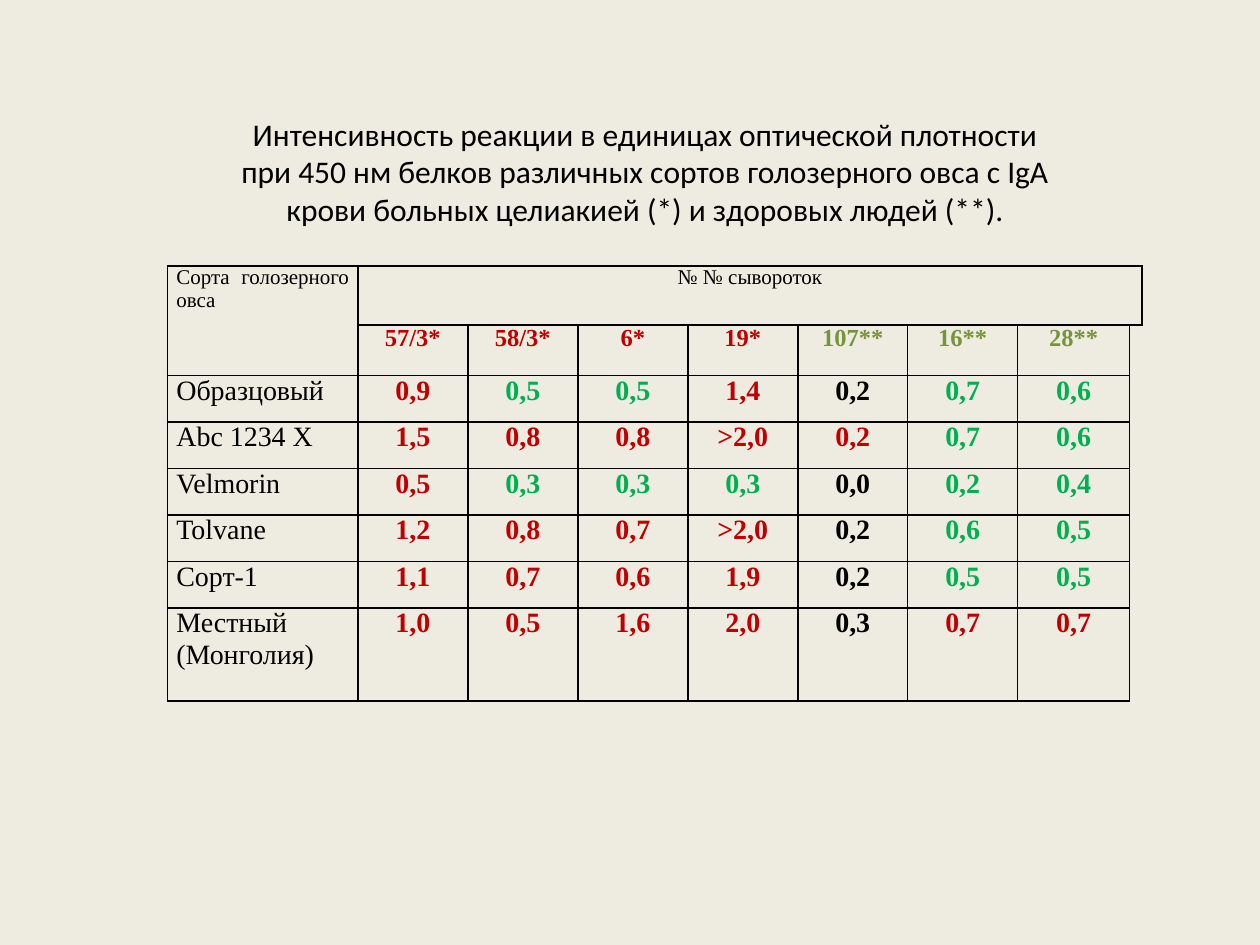
from lxml.etree import SubElement
from pptx import Presentation
from pptx.dml.color import RGBColor
from pptx.enum.text import MSO_ANCHOR, PP_ALIGN as Align
from pptx.oxml.ns import qn
from pptx.util import Pt

COLORS = {
    "background": "EEECE1",
    "black": "000000",
    "red": "C00000",
    "green": "00B050",
    "olive": "77933C",
}
CODES = {"r": "red", "g": "green", "k": "black", "o": "olive"}

TITLE = ("Интенсивность реакции в единицах оптической плотности при 450 нм белков "
         "различных сортов голозерного овса с IgA крови больных целиакией (*) "
         "и здоровых людей (**).")
SERA = "57/3* 58/3* 6* 19* 107** 16** 28**"
# Variety, readings, colour code of each reading
VARIETIES = [
    ("Образцовый", "0,9 0,5 0,5 1,4 0,2 0,7 0,6", "rggrkgg"),
    ("Abc 1234 X", "1,5 0,8 0,8 >2,0 0,2 0,7 0,6", "rrrrrgg"),
    ("Velmorin", "0,5 0,3 0,3 0,3 0,0 0,2 0,4", "rgggkgg"),
    ("Tolvane", "1,2 0,8 0,7 >2,0 0,2 0,6 0,5", "rrrrkgg"),
    ("Сорт-1", "1,1 0,7 0,6 1,9 0,2 0,5 0,5", "rrrrkgg"),
    ("Местный (Монголия)", "1,0 0,5 1,6 2,0 0,3 0,7 0,7", "rrrrkrr"),
]
COLUMN_WIDTHS = [108.7] + [62.85] * 6 + [63.9, 7.2]
ROW_HEIGHTS = [33.7, 28.9] + [26.6] * 5 + [53.2]
SPACER = len(COLUMN_WIDTHS) - 1


def add_run(paragraph, text, font, size, color="black", bold=False):
    run = paragraph.add_run()
    run.text = text
    run.font.name = font
    run.font.size = Pt(size)
    run.font.bold = bold
    run.font.color.rgb = RGBColor.from_string(COLORS[color])


def set_borders(cell, sides):
    """Draw the sides named among L, R, T, B and clear the others."""
    properties = cell._tc.get_or_add_tcPr()
    for side in "LRTB":
        line = SubElement(properties, qn(f"a:ln{side}"), w=str(Pt(1)))
        if side in sides:
            fill = SubElement(line, qn("a:solidFill"))
            SubElement(fill, qn("a:srgbClr"), val=COLORS["black"])
        else:
            SubElement(line, qn("a:noFill"))


def write_cell(cell, text, size, align=Align.CENTER, color="black", bold=False):
    cell.margin_left = cell.margin_right = Pt(5)
    paragraph = cell.text_frame.paragraphs[0]
    paragraph.alignment = align
    paragraph.space_before = Pt(12)
    add_run(paragraph, text, "Times New Roman", size, color, bold)


def write_values(table, row, values, codes, size):
    for column, (value, code) in enumerate(zip(values.split(), codes), start=1):
        write_cell(table.cell(row, column), value, size, color=CODES[code], bold=True)


def add_title(slide, left, top, width, height):
    box = slide.shapes.add_textbox(Pt(left), Pt(top), Pt(width), Pt(height))
    box.text_frame.word_wrap = True
    paragraph = box.text_frame.paragraphs[0]
    paragraph.alignment = Align.CENTER
    add_run(paragraph, TITLE, "Calibri", 18)


def add_reaction_table(slide, left, top):
    frame = slide.shapes.add_table(
        len(ROW_HEIGHTS), len(COLUMN_WIDTHS), Pt(left), Pt(top),
        Pt(sum(COLUMN_WIDTHS)), Pt(sum(ROW_HEIGHTS)))
    table = frame.table
    table.first_row = table.horz_banding = False
    for column, width in zip(table.columns, COLUMN_WIDTHS):
        column.width = Pt(width)

    # Grid: the narrow last column is open below the header
    for row_index, (row, height) in enumerate(zip(table.rows, ROW_HEIGHTS)):
        row.height = Pt(height)
        for column_index, cell in enumerate(row.cells):
            open_cell = column_index == SPACER and row_index > 0
            open_sides = "LT" if row_index == 1 else "L"
            set_borders(cell, open_sides if open_cell else "LRTB")
            cell.fill.background()
            cell.vertical_anchor = MSO_ANCHOR.TOP
            cell.margin_left = cell.margin_right = 0
            cell.margin_top = cell.margin_bottom = 0

    # Header
    table.cell(0, 0).merge(table.cell(1, 0))
    table.cell(0, 1).merge(table.cell(0, SPACER))
    write_cell(table.cell(0, 0), "Сорта голозерного овса", 12, Align.JUSTIFY)
    write_cell(table.cell(0, 1), "№ № сывороток", 12)
    write_values(table, 1, SERA, "rrrrooo", 14)

    # Varieties
    for row, (name, values, codes) in enumerate(VARIETIES, start=2):
        write_cell(table.cell(row, 0), name, 16, Align.JUSTIFY)
        write_values(table, row, values, codes, 16)


def main():
    presentation = Presentation()
    presentation.slide_width, presentation.slide_height = Pt(720), Pt(540)
    slide = presentation.slides.add_slide(presentation.slide_layouts[6])
    background = slide.background.fill
    background.solid()
    background.fore_color.rgb = RGBColor.from_string(COLORS["background"])
    add_reaction_table(slide, 95.8, 151.9)
    add_title(slide, 129.6, 61.9, 478, 72.7)
    presentation.save("out.pptx")


if __name__ == "__main__":
    main()
